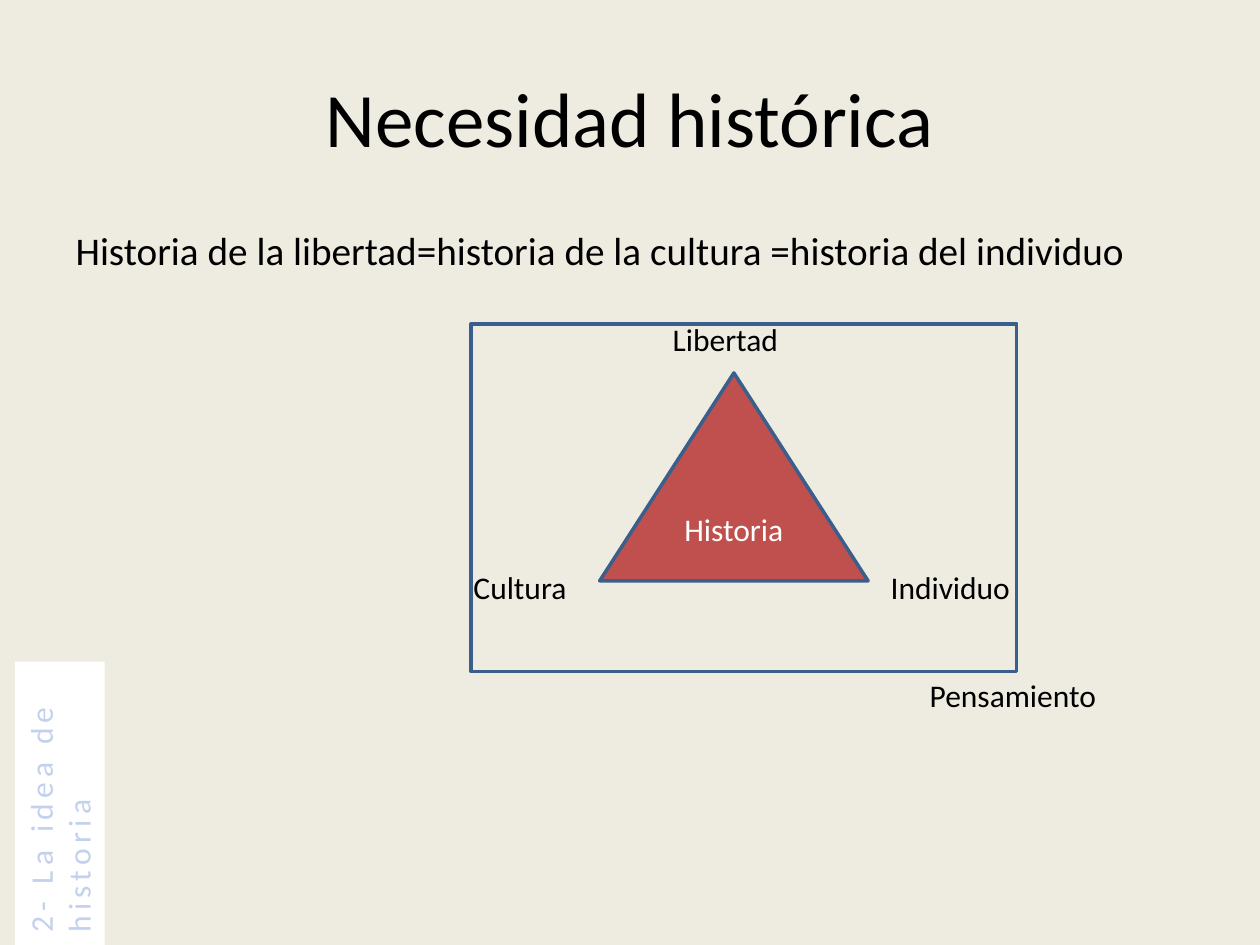
from lxml.etree import SubElement
from pptx import Presentation
from pptx.dml.color import RGBColor
from pptx.enum.shapes import MSO_SHAPE
from pptx.enum.text import MSO_ANCHOR, MSO_AUTO_SIZE, PP_ALIGN
from pptx.oxml.ns import qn
from pptx.util import Inches, Pt

# Content: boxes are left, top, width, height in inches
TITLE = ("Necesidad histórica", (0.5, 0.3, 9, 1.25))
BODY = ("Historia de la libertad=historia de la cultura =historia del individuo",
        (0.5, 1.75, 8.67, 0.58))
TRIANGLE = ("Historia", (4.76, 2.96, 2.13, 1.65))
FRAME = (3.74, 2.57, 4.33, 2.76)
SIDE_TAB = ("2- La idea de historia", (-0.65, 6.02, 2.25, 0.71))
LABEL_HEIGHT = 0.4
LABELS = [  # text, left, top, width
    ("Libertad", 5.24, 2.49, 1.65),
    ("Cultura", 3.66, 4.46, 0.94),
    ("Individuo", 6.97, 4.46, 1.65),
    ("Pensamiento", 7.28, 5.32, 1.65),
]
FONT = "Calibri"
BACKGROUND, RED, BLUE = "EEECE1", "C0504D", "3A5F8C"
BLACK, WHITE, PALE_BLUE = "000000", "FFFFFF", "C2D1ED"


def paint(target, color):
    target.solid()
    target.fore_color.rgb = RGBColor.from_string(color)


def place(shape, box):
    shape.left, shape.top, shape.width, shape.height = map(Inches, box)


def write(shape, text, size=18, color=BLACK, align=PP_ALIGN.LEFT, anchor=MSO_ANCHOR.TOP):
    frame = shape.text_frame
    frame.word_wrap = True
    frame.auto_size = MSO_AUTO_SIZE.NONE
    frame.vertical_anchor = anchor
    para = frame.paragraphs[0]
    para.text = text
    para.alignment = align
    para.font.name, para.font.size = FONT, Pt(size)
    paint(para.font.fill, color)
    return para


def add_shape(page, kind, box, fill=None, line=None):
    shape = page.shapes.add_shape(kind, *map(Inches, box))
    shape.shadow.inherit = False
    if fill:
        paint(shape.fill, fill)
    else:
        shape.fill.background()
    if line:
        paint(shape.line.fill, line)
        shape.line.width = Pt(2)
    else:
        shape.line.fill.background()
    return shape


deck = Presentation()
deck.slide_width, deck.slide_height = Inches(10), Inches(7.5)
page = deck.slides.add_slide(deck.slide_layouts[1])
paint(page.background.fill, BACKGROUND)

# Title and statement
title, body = page.placeholders
place(title, TITLE[1])
write(title, TITLE[0], 44, align=PP_ALIGN.CENTER, anchor=MSO_ANCHOR.MIDDLE)
place(body, BODY[1])
para = write(body, BODY[0], 22.4)
properties = para._p.get_or_add_pPr()
properties.set("marL", str(Inches(0.38)))
properties.set("indent", str(-Inches(0.38)))
properties.insert(0, SubElement(properties, qn("a:buNone")))

# Triangle of history and its corners
triangle = add_shape(page, MSO_SHAPE.ISOSCELES_TRIANGLE, TRIANGLE[1], RED, BLUE)
write(triangle, TRIANGLE[0], color=WHITE, align=PP_ALIGN.CENTER, anchor=MSO_ANCHOR.MIDDLE)
for text, left, top, width in LABELS:
    label = page.shapes.add_textbox(*map(Inches, (left, top, width, LABEL_HEIGHT)))
    write(label, text)

# Vertical tab with widely spaced letters
tab = add_shape(page, MSO_SHAPE.RECTANGLE, SIDE_TAB[1], WHITE)
tab.rotation = 270
para = write(tab, SIDE_TAB[0], color=PALE_BLUE)
para.runs[0].font._element.set("spc", "300")

# Frame of thought
add_shape(page, MSO_SHAPE.RECTANGLE, FRAME, line=BLUE)

deck.save("out.pptx")
